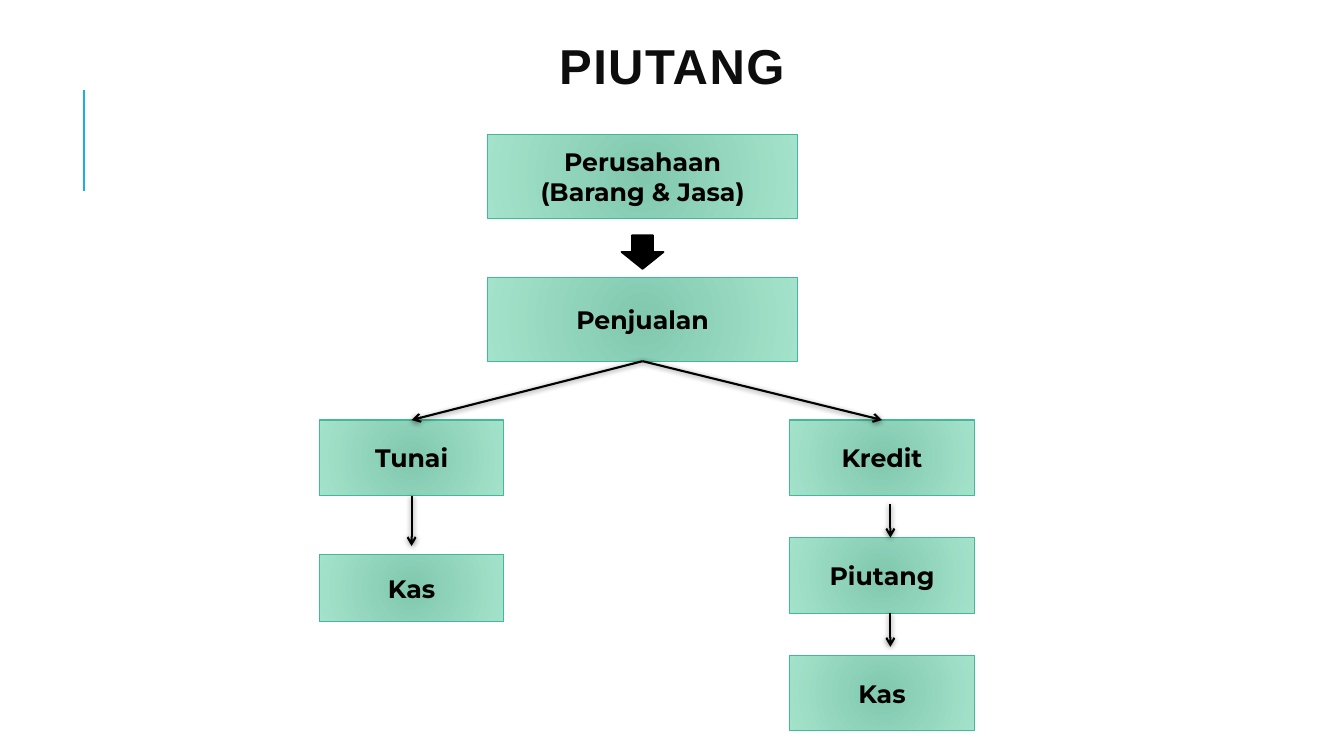
from lxml import etree
from pptx import Presentation, util as u
from pptx.dml.color import RGBColor
from pptx.enum import shapes, text
from pptx.oxml import ns, parse_xml

PX = 9525
BLACK = RGBColor(0x00, 0x00, 0x00)
INK = RGBColor(0x0D, 0x0D, 0x0D)
BLUE = RGBColor(0x1C, 0xAD, 0xE4)
GREEN_EDGE = RGBColor(0x42, 0xBA, 0x97)
GREEN_DARK = RGBColor(0x81, 0xC8, 0xAF)
GREEN_LIGHT = RGBColor(0xA4, 0xE3, 0xCB)

TITLE_FONT = {"name": "Arial", "size": u.Pt(35), "bold": True}
BOX_FONT = {"name": "Montserrat", "size": u.Pt(18), "bold": True}

BOXES = [
    ("Perusahaan\n(Barang & Jasa)", 464, 128, 296, 80),
    ("Penjualan", 464, 264, 296, 80),
    ("Tunai", 304, 400, 176, 72),
    ("Kredit", 752, 400, 176, 72),
    ("Kas", 304, 528, 176, 64),
    ("Piutang", 752, 512, 176, 72),
    ("Kas", 752, 624, 176, 72),
]
ARROWS = [
    (612, 344, 392, 400),
    (612, 344, 840, 400),
    (392, 472, 392, 520),
    (848, 480, 848, 512),
    (848, 584, 848, 616),
]
RADIAL_PATH = (
    f'<a:path {ns.nsdecls("a")} path="circle">'
    '<a:fillToRect l="100000" t="100000" r="100000" b="100000"/></a:path>'
)
SOFT_SHADOW = (
    '<a:outerShdw blurRad="50800" dist="12700" dir="5400000" rotWithShape="0">'
    '<a:srgbClr val="000000"><a:alpha val="50000"/></a:srgbClr></a:outerShdw>'
)


def to_emu(*lengths):
    """Turn px lengths into EMU."""
    return [u.Emu(length * PX) for length in lengths]


def write_text(shape, content, font, color):
    """Put centred text in a shape, one paragraph per line."""
    frame = shape.text_frame
    frame.word_wrap = True
    frame.vertical_anchor = text.MSO_ANCHOR.MIDDLE
    frame.text = content
    for paragraph in frame.paragraphs:
        paragraph.alignment = text.PP_ALIGN.CENTER
        for run in paragraph.runs:
            for name, value in font.items():
                setattr(run.font, name, value)
            run.font.color.rgb = color


def add_title(slide, content, *place):
    """Add the letter-spaced slide title."""
    box = slide.shapes.add_textbox(*to_emu(*place))
    write_text(box, content, TITLE_FONT, INK)
    paragraph = box.text_frame.paragraphs[0]
    paragraph.line_spacing = 0.8
    paragraph.runs[0].font._element.set("spc", "100")


def add_box(slide, content, *place):
    """Add a green box with a radial gradient."""
    shape = slide.shapes.add_shape(shapes.MSO_SHAPE.RECTANGLE, *to_emu(*place))
    shape.shadow.inherit = False
    shape.fill.gradient()
    for stop, color in zip(shape.fill.gradient_stops, (GREEN_DARK, GREEN_LIGHT)):
        stop.color.rgb = color
    linear = shape._element.spPr.find(".//" + ns.qn("a:lin"))
    linear.getparent().replace(linear, parse_xml(RADIAL_PATH))
    shape.line.color.rgb = GREEN_EDGE
    shape.line.width = u.Pt(0.75)
    write_text(shape, content, BOX_FONT, BLACK)


def add_block_arrow(slide, *place):
    """Add a solid black arrow pointing down."""
    shape = slide.shapes.add_shape(shapes.MSO_SHAPE.DOWN_ARROW, *to_emu(*place))
    shape.shadow.inherit = False
    shape.fill.solid()
    shape.fill.fore_color.rgb = BLACK
    shape.line.color.rgb = BLACK
    shape.line.width = u.Pt(1.25)


def add_line(slide, color, ends, effect=""):
    """Add a straight line with the given effect and return it."""
    line = slide.shapes.add_connector(shapes.MSO_CONNECTOR.STRAIGHT, *to_emu(*ends))
    line.line.color.rgb = color
    line.line.width = u.Pt(1.5)
    effects = f'<a:effectLst {ns.nsdecls("a")}>{effect}</a:effectLst>'
    line._element.spPr.append(parse_xml(effects))
    return line


def add_arrow(slide, ends):
    """Add a black line with an open arrowhead and a soft shadow."""
    arrow = add_line(slide, BLACK, ends, SOFT_SHADOW)
    outline = arrow._element.spPr.find(ns.qn("a:ln"))
    etree.SubElement(outline, ns.qn("a:tailEnd"), type="arrow")


def main():
    """Build the receivables flow slide."""
    presentation = Presentation()
    presentation.slide_width, presentation.slide_height = to_emu(1280, 720)
    slide = presentation.slides.add_slide(presentation.slide_layouts[6])
    add_line(slide, BLUE, (80, 182, 80, 86))
    add_title(slide, "PIUTANG", 88, 38, 1104, 58)
    for box in BOXES:
        add_box(slide, *box)
    add_block_arrow(slide, 592, 224, 40, 32)
    for ends in ARROWS:
        add_arrow(slide, ends)
    presentation.save("out.pptx")


if __name__ == "__main__":
    main()
